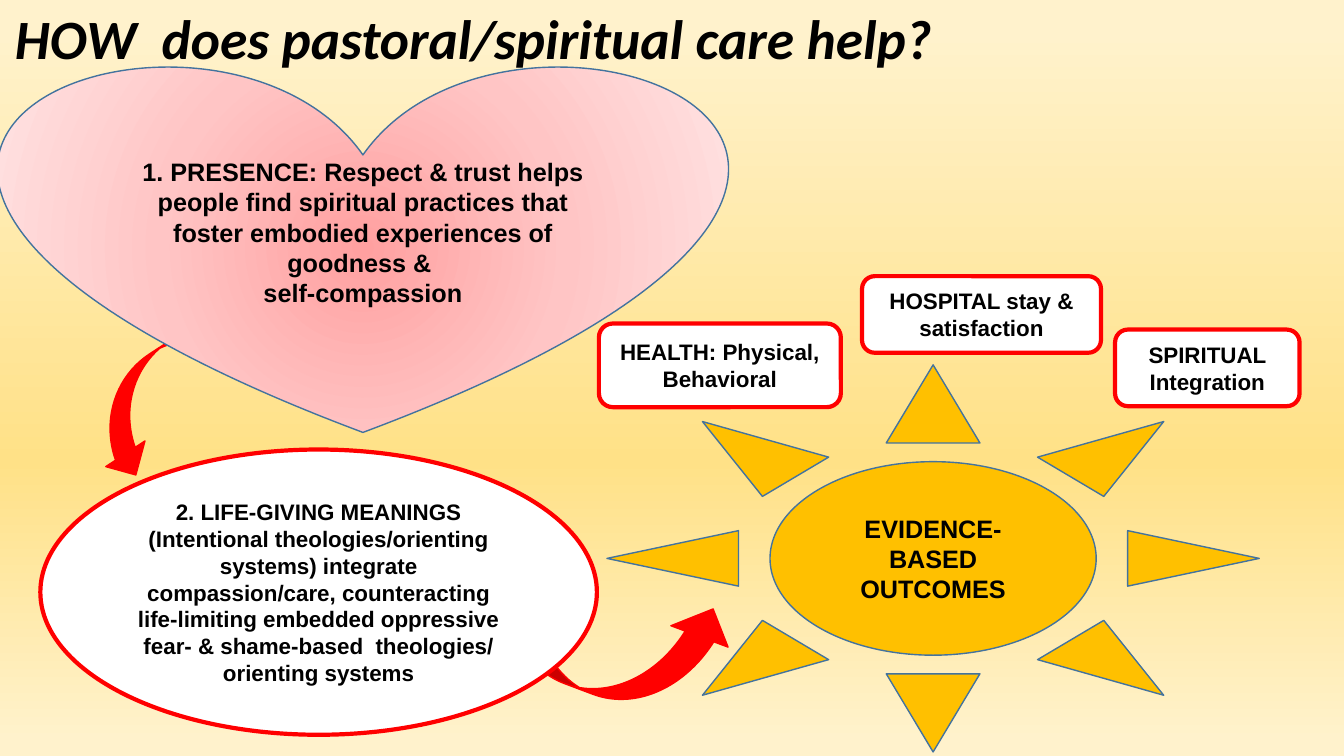
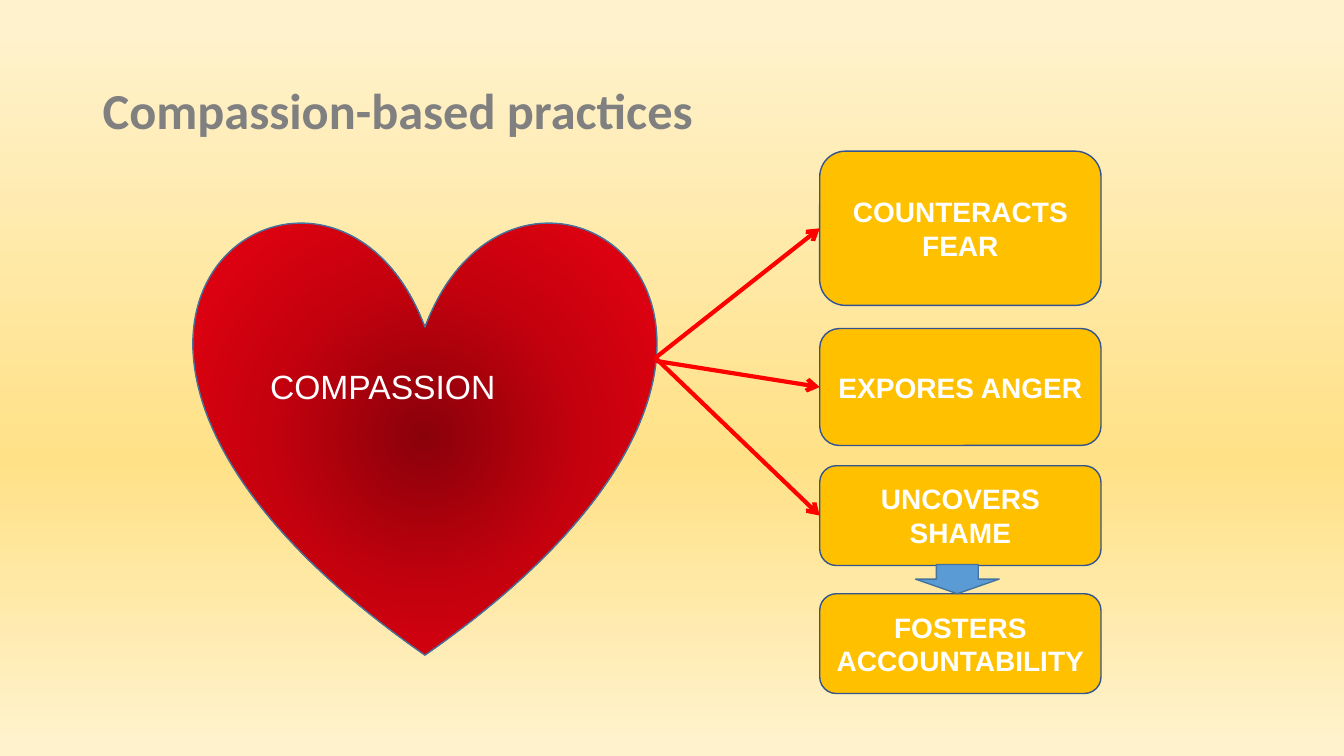
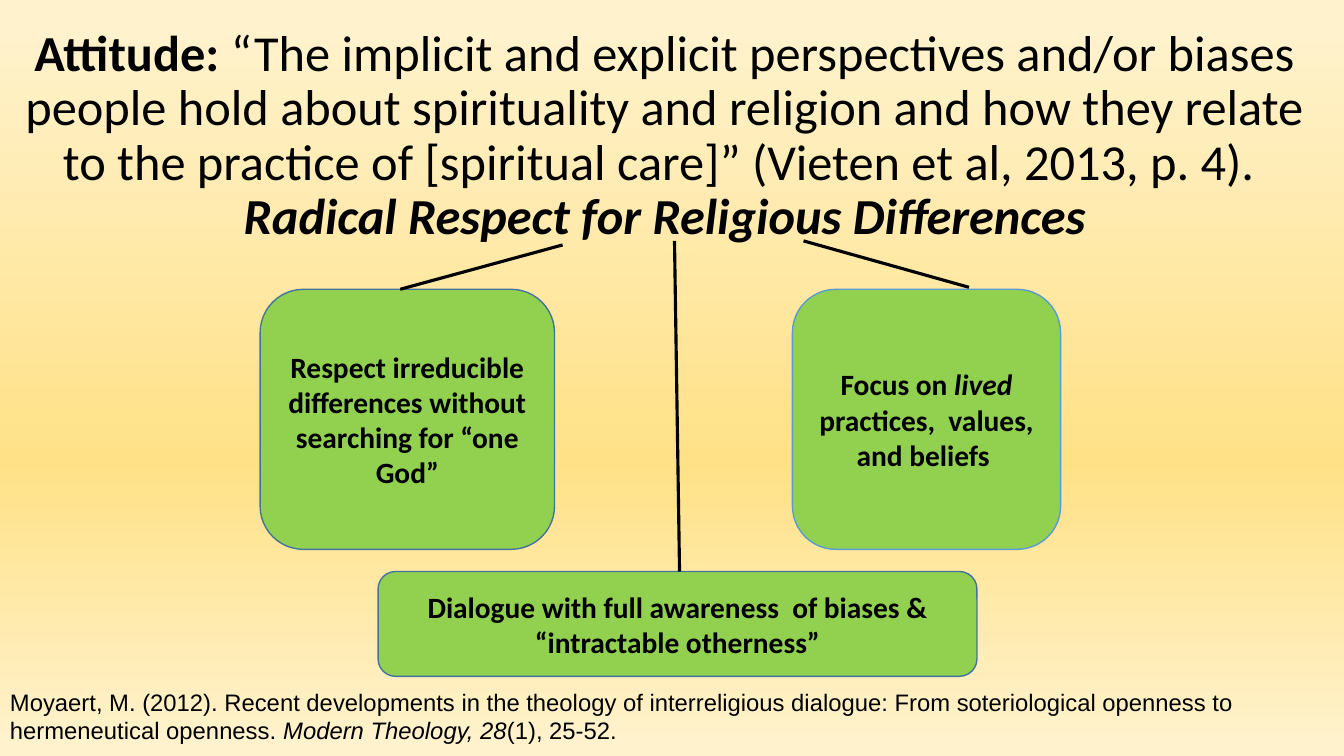
"""Builds three slides on compassion and spiritual care."""
import pptx
import pptx.dml.color
import pptx.enum.shapes
import pptx.enum.text
import pptx.oxml
import pptx.oxml.ns
import pptx.util
from lxml import etree

Inches = pptx.util.Inches
Pt = pptx.util.Pt
rgb = pptx.dml.color.RGBColor.from_string
qn = pptx.oxml.ns.qn
SHAPE = pptx.enum.shapes.MSO_SHAPE
ANCHOR = pptx.enum.text.MSO_ANCHOR
ALIGN = pptx.enum.text.PP_ALIGN

BLACK, WHITE, RED = "000000", "FFFFFF", "FF0000"
GOLD, GREEN, BLUE = "FFC000", "92D050", "5B9BD5"
OUTLINE, NAVY, GREY = "43739E", "325491", "808080"
TITLE = dict(font="Calibri", size=36, spacing=0.9)


def set_gradient(parent, stops, direction):
    """Replaces the solid fill under parent by a gradient."""
    grad = etree.Element(qn("a:gradFill"), rotWithShape="1")
    gs_list = etree.SubElement(grad, qn("a:gsLst"))
    for pos, colour in stops:
        gs = etree.SubElement(gs_list, qn("a:gs"), pos=str(pos * 1000))
        etree.SubElement(gs, qn("a:srgbClr"), val=colour)
    if direction == "circle":
        shade = etree.SubElement(grad, qn("a:path"))
        shade.set("path", "circle")
        etree.SubElement(shade, qn("a:fillToRect"),
                         {side: "50000" for side in "ltrb"})
    else:
        etree.SubElement(grad, qn("a:lin"), ang=str(direction * 60000), scaled="0")
    parent.replace(parent.find(qn("a:solidFill")), grad)


def add_box(s, kind, at, paragraphs=(), fill=WHITE, line=OUTLINE, width=1, size=16,
            font="Arial", colour=BLACK, style="b", align=ALIGN.CENTER,
            anchor=ANCHOR.MIDDLE, spacing=None):
    """Adds a shape, or a text box if kind is None; runs are text or (text, style)."""
    at = [Inches(v) for v in at]
    if kind is None:
        sp = s.shapes.add_textbox(*at)
    else:
        sp = s.shapes.add_shape(kind, *at)
        sp.shadow.inherit = False
        sp.fill.solid()
        sp.fill.fore_color.rgb = rgb(fill)
        sp.line.color.rgb = rgb(line)
        sp.line.width = Pt(width)
    tf = sp.text_frame
    tf.word_wrap = True
    tf.vertical_anchor = anchor
    for i, runs in enumerate(paragraphs):
        p = tf.add_paragraph() if i else tf.paragraphs[0]
        p.alignment = align
        p.line_spacing = spacing
        for run in [runs] if isinstance(runs, str) else runs:
            text, look = (run, style) if isinstance(run, str) else run
            r = p.add_run()
            r.text = text
            r.font.name = font
            r.font.size = Pt(size)
            r.font.color.rgb = rgb(colour)
            r.font.bold = "b" in look
            r.font.italic = "i" in look
    return sp


prs = pptx.Presentation()
prs.slide_width, prs.slide_height = Inches(13.33), Inches(7.5)
master = prs.slide_master
master.background.fill.solid()
set_gradient(master._element.find(".//" + qn("p:bgPr")),
             [(4, "FFF2CC"), (61, "FFE187"), (98, "FFF2CC")], 90)
help_slide, practice_slide, attitude_slide = [
    prs.slides.add_slide(prs.slide_layouts[6]) for _ in range(3)]
lines = []

s = help_slide
add_box(s, None, (0.05, 0.07, 13.48, 1.34), ["HOW  does pastoral/spiritual care help?"],
        **{**TITLE, "size": 39.6}, style="bi", align=ALIGN.LEFT, anchor=ANCHOR.TOP)
for at, angle in [((5.42, 5.1, 1.21, 2.39), 290.5), ((1.32, 2.81, 0.93, 2.12), 56.8)]:
    sp = add_box(s, SHAPE.CURVED_RIGHT_ARROW, at, fill=RED, line=RED)
    sp.rotation = angle
for kind, at, text in [
    (SHAPE.OVAL, (0.4, 4.46, 5.52, 2.83),
     "2. LIFE-GIVING MEANINGS (Intentional theologies/orienting systems) integrate "
     "compassion/care, counteracting life-limiting embedded oppressive fear- & "
     "shame-based  theologies/ orienting systems"),
    (SHAPE.ROUNDED_RECTANGLE, (8.55, 2.74, 2.37, 0.76), "HOSPITAL stay & satisfaction"),
    (SHAPE.ROUNDED_RECTANGLE, (5.94, 3.21, 2.4, 0.83), "HEALTH: Physical, Behavioral"),
    (SHAPE.ROUNDED_RECTANGLE, (11.06, 3.27, 1.83, 0.76), "SPIRITUAL Integration"),
]:
    add_box(s, kind, at, [text], line=RED, width=3)
heart = add_box(s, SHAPE.HEART, (0, 0.62, 7.2, 3.67), [
    "1. PRESENCE: Respect & trust helps people find spiritual practices that",
    "foster embodied experiences of goodness & ",
    "self-compassion"], size=18)
set_gradient(heart._element.spPr, [(0, "FFA0A0"), (50, "FFC5C5"), (100, "FFE3E3")], "circle")
add_box(s, SHAPE.SUN, (6.02, 3.62, 6.47, 3.84), ["EVIDENCE-BASED OUTCOMES"],
        fill=GOLD, size=18)

s = practice_slide
heart = add_box(s, SHAPE.HEART, (1.93, 2.16, 4.57, 4.34))
set_gradient(heart._element.spPr, [(0, "8A010A"), (50, "C5010E"), (100, "E90111")], "circle")
add_box(s, None, (0.92, 0.4, 11.5, 1.45), ["Compassion-based practices"],
        **TITLE, colour=GREY, align=ALIGN.LEFT)
left = 8.13
for text, top, height, start in [
    ("COUNTERACTS FEAR", 1.5, 1.53, 3.55),
    ("EXPORES ANGER", 3.26, 1.16, 3.58),
    ("UNCOVERS SHAME", 4.62, 0.99, 3.55),
    ("FOSTERS ACCOUNTABILITY", 5.89, 0.99, None),
]:
    add_box(s, SHAPE.ROUNDED_RECTANGLE, (left, top, 2.79, height), [text],
            fill=GOLD, line=NAVY, size=20, colour=WHITE)
    if start:
        lines.append((s, (6.5, start, left, top + height / 2), RED, 3, True))
add_box(s, None, (2.58, 3.58, 3.92, 0.5), ["COMPASSION"], size=24, colour=WHITE,
        style="", align=ALIGN.LEFT, anchor=ANCHOR.TOP)
add_box(s, SHAPE.DOWN_ARROW, (9.08, 5.6, 0.83, 0.29), fill=BLUE)

s = attitude_slide
add_box(s, None, (-0.07, 0.14, 13.33, 2.43), [
    ["Attitude: ",
     ("“The implicit and explicit perspectives and/or biases people hold about "
      "spirituality and religion and how they relate to the practice of "
      "[spiritual care]” (Vieten et al, 2013, p. 4). ", "")],
    [("Radical Respect for Religious Differences", "bi")]], **TITLE)
for at, runs, outline in [
    ((3.75, 5.67, 5.94, 1.04),
     ["Dialogue with full awareness  of biases & “intractable otherness”"], OUTLINE),
    ((2.58, 2.87, 2.92, 2.58),
     ["Respect irreducible differences without searching for “one God”"], OUTLINE),
    ((7.86, 2.87, 2.66, 2.58),
     ["Focus on ", ("lived", "bi"), " practices,  values, and beliefs "], BLUE),
]:
    add_box(s, SHAPE.ROUNDED_RECTANGLE, at, [runs], fill=GREEN, line=outline,
            size=21, font="Calibri")
add_box(s, None, (0, 6.77, 13.19, 0.67), [
    ["Moyaert, M. (2012). Recent developments in the theology of interreligious "
     "dialogue: From soteriological openness to hermeneutical openness. ",
     ("Modern Theology, 28", "i"), "(1), 25-52."]],
    size=17, style="", align=ALIGN.LEFT, anchor=ANCHOR.TOP)
for ends in [(5.58, 2.43, 3.97, 2.87), (6.69, 2.39, 6.74, 5.67), (7.97, 2.39, 9.61, 2.85)]:
    lines.append((s, ends, BLACK, 2.25, False))

for s, ends, colour, width, arrow in lines:
    cx = s.shapes.add_connector(pptx.enum.shapes.MSO_CONNECTOR.STRAIGHT,
                                *[Inches(v) for v in ends])
    cx.line.color.rgb = rgb(colour)
    cx.line.width = Pt(width)
    if arrow:
        etree.SubElement(cx.line._get_or_add_ln(), qn("a:tailEnd"), type="arrow")
    etree.SubElement(cx._element.spPr, qn("a:effectLst"))

prs.save("out.pptx")
